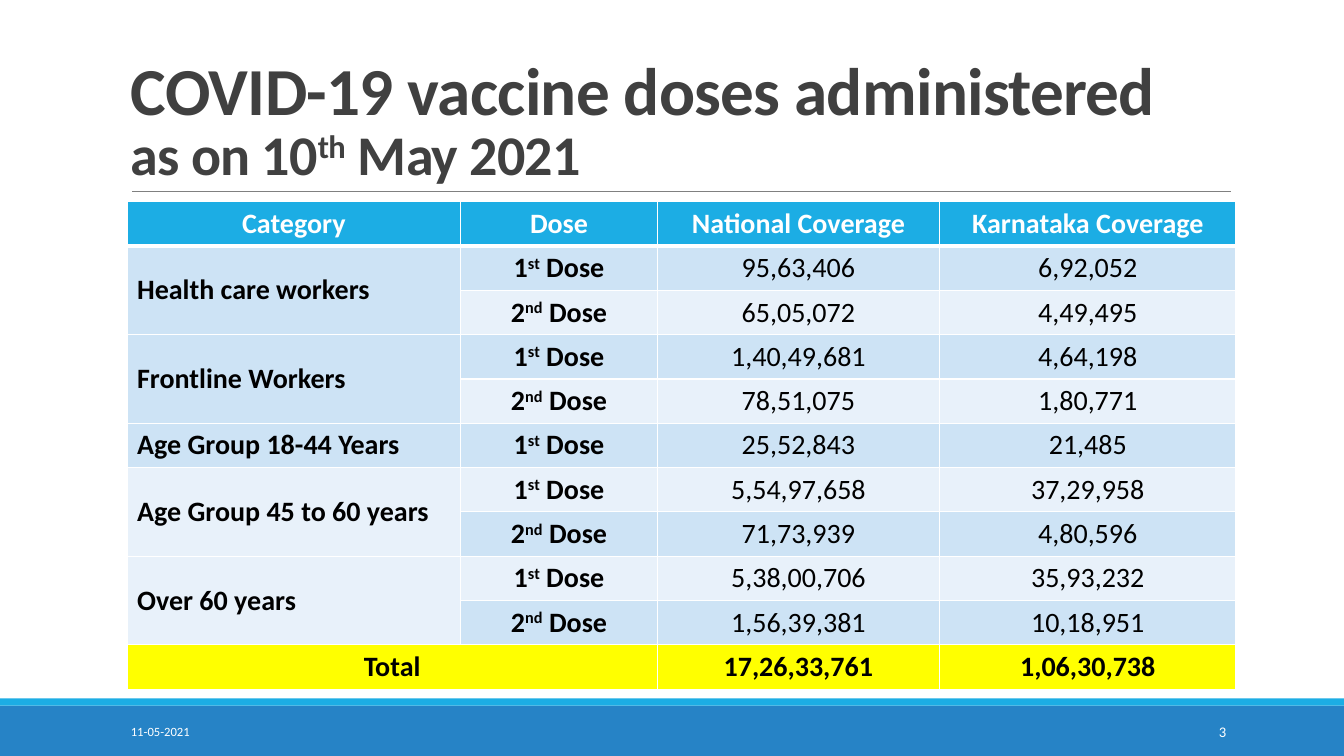
"""Build the slide on vaccine doses given by category and dose."""
import dataclasses

import pptx
import pptx.dml.color
import pptx.enum.shapes
import pptx.enum.text
import pptx.oxml
import pptx.oxml.ns
import pptx.util

Inches = pptx.util.Inches
Pt = pptx.util.Pt
RGB = pptx.dml.color.RGBColor.from_string
Align = pptx.enum.text.PP_ALIGN
Anchor = pptx.enum.text.MSO_ANCHOR


@dataclasses.dataclass(frozen=True)
class Theme:
    font: str = "Calibri"
    white: str = "FFFFFF"
    black: str = "000000"
    title: str = "404040"
    rule: str = "808080"
    sky: str = "1CADE4"
    blue: str = "2683C6"
    odd: str = "CDE3F5"
    even: str = "E8F1FA"
    total: str = "FFFF00"
    head: float = 48
    sub: float = 40
    cell: float = 20
    date: float = 9
    page: float = 10.5


theme = Theme()


def add_run(para, text, size, color, bold=False, raised=False):
    """Add one styled run to a paragraph."""
    run = para.add_run()
    run.text = text
    run.font.name = theme.font
    run.font.size = Pt(size)
    run.font.bold = bold
    run.font.color.rgb = RGB(color)
    if raised:
        run.font._element.set("baseline", "30000")
    return run


def add_box(left, top, width, height, anchor):
    """Add a wrapping text box and return its text frame."""
    box = slide.shapes.add_textbox(
        Inches(left), Inches(top), Inches(width), Inches(height))
    frame = box.text_frame
    frame.word_wrap = True
    frame.vertical_anchor = anchor
    return frame


deck = pptx.Presentation()
deck.slide_width = Inches(13.33)
deck.slide_height = Inches(7.5)
slide = deck.slides.add_slide(deck.slide_layouts[6])

for top, height, color in [(7, 0.5, theme.blue), (6.93, 0.07, theme.sky)]:
    band = slide.shapes.add_shape(
        pptx.enum.shapes.MSO_SHAPE.RECTANGLE,
        Inches(0), Inches(top), deck.slide_width, Inches(height))
    band.shadow.inherit = False
    band.fill.solid()
    band.fill.fore_color.rgb = RGB(color)
    band.line.fill.background()

rule = slide.shapes.add_connector(
    pptx.enum.shapes.MSO_CONNECTOR.STRAIGHT,
    Inches(1.31), Inches(1.9), Inches(12.21), Inches(1.9))
rule.line.color.rgb = RGB(theme.rule)
rule.line.width = Pt(0.5)
rule._element.spPr.append(pptx.oxml.parse_xml(
    f'<a:effectLst {pptx.oxml.ns.nsdecls("a")}/>'))

para = add_box(1.2, 0.31, 11, 1.59, Anchor.BOTTOM).paragraphs[0]
para.line_spacing = 0.85
runs = [add_run(para, "COVID-19 vaccine doses administered",
                theme.head, theme.title, True)]
para.add_line_break()
for text, raised in [("as on 10", False), ("th", True), (" May 2021", False)]:
    runs.append(add_run(para, text, theme.sub, theme.title, True, raised))
for run in runs:
    run.font._element.set("spc", "-50")

first = [("1", False), ("st", True), (" Dose", False)]
second = [("2", False), ("nd", True), (" Dose", False)]
groups = [
    ("Health care workers",
     [("95,63,406", "6,92,052"), ("65,05,072", "4,49,495")]),
    ("Frontline Workers",
     [("1,40,49,681", "4,64,198"), ("78,51,075", "1,80,771")]),
    ("Age Group 18-44 Years", [("25,52,843", "21,485")]),
    ("Age Group 45 to 60 years",
     [("5,54,97,658", "37,29,958"), ("71,73,939", "4,80,596")]),
    ("Over 60 years",
     [("5,38,00,706", "35,93,232"), ("1,56,39,381", "10,18,951")]),
]
rows = [["Category", "Dose", "National Coverage", "Karnataka Coverage"]]
spans = []
for name, counts in groups:
    start = len(rows)
    for dose, pair in zip([first, second], counts):
        rows.append([name if dose is first else "", dose, *pair])
    if len(counts) > 1:
        spans.append((start, 0, start + 1, 0))
last = len(rows)
rows.append(["Total", "", "17,26,33,761", "1,06,30,738"])
spans.append((last, 0, last, 1))

table = slide.shapes.add_table(
    len(rows), 4, Inches(1.26), Inches(2), Inches(11), Inches(4.84)).table
for col, width in zip(table.columns, [3.31, 1.95, 2.8, 2.94]):
    col.width = Inches(width)
for row in table.rows:
    row.height = Inches(0.44)

for i, row in enumerate(rows):
    if i == 0:
        fill = theme.sky
    elif i == last:
        fill = theme.total
    else:
        fill = theme.odd if i % 2 else theme.even
    for j, value in enumerate(row):
        cell = table.cell(i, j)
        cell.vertical_anchor = Anchor.MIDDLE
        props = cell._tc.get_or_add_tcPr()
        for side in "LRTB":
            thick = (i, side) in [(0, "B"), (1, "T")]
            props.append(pptx.oxml.parse_xml(
                f'<a:ln{side} {pptx.oxml.ns.nsdecls("a")} '
                f'w="{Pt(3 if thick else 1)}"><a:solidFill>'
                f'<a:srgbClr val="{theme.white}"/></a:solidFill></a:ln{side}>'))
        cell.fill.solid()
        cell.fill.fore_color.rgb = RGB(fill)
        if not value:
            continue
        para = cell.text_frame.paragraphs[0]
        edge = i in (0, last)
        para.alignment = Align.CENTER if edge or j else Align.LEFT
        parts = [(value, False)] if isinstance(value, str) else value
        for text, raised in parts:
            add_run(para, text, theme.cell, theme.black if i else theme.white,
                    edge or j < 2, raised)

for top, left, bottom, right in spans:
    table.cell(top, left).merge(table.cell(bottom, right))

para = add_box(1.2, 7.06, 2.7, 0.4, Anchor.MIDDLE).paragraphs[0]
add_run(para, "11-05-2021", theme.date, theme.white)
para = add_box(10.83, 7.06, 1.43, 0.4, Anchor.MIDDLE).paragraphs[0]
para.alignment = Align.RIGHT
add_run(para, "3", theme.page, theme.white)

deck.save("out.pptx")
